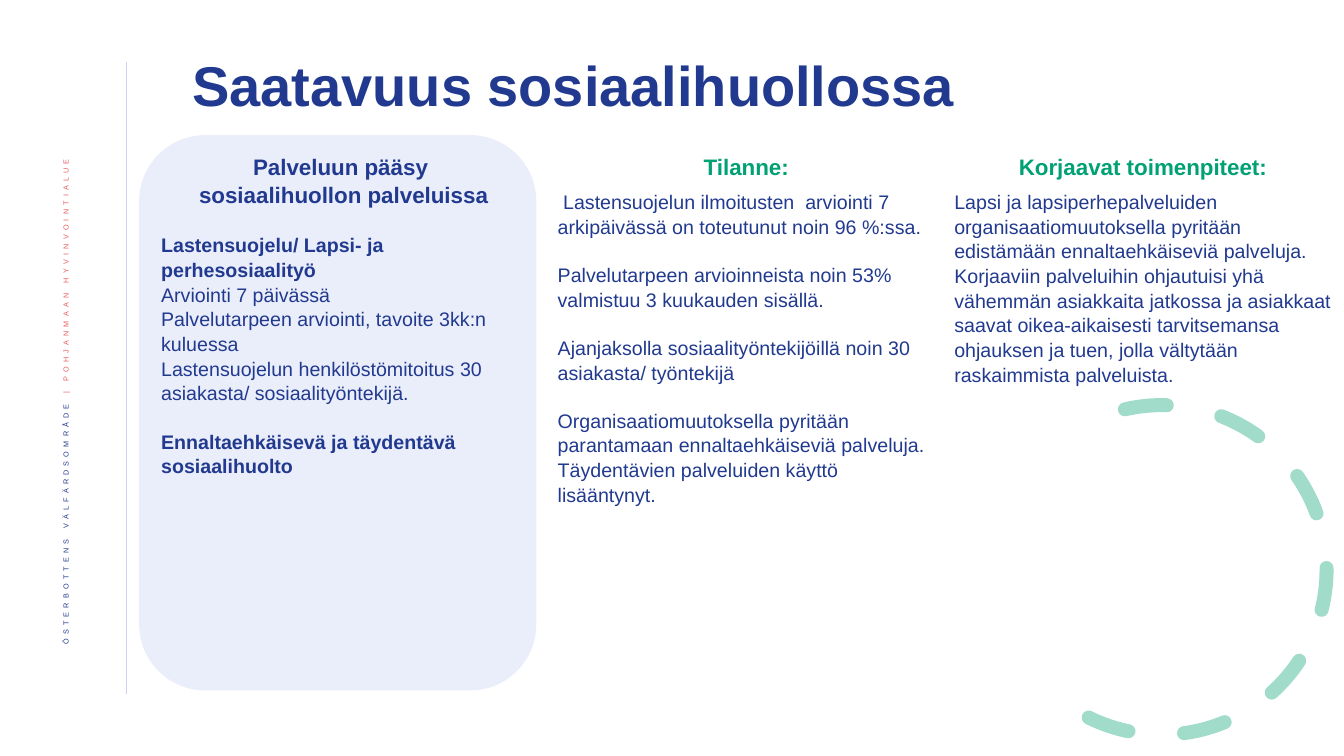
import pptx
import pptx.dml.color
import pptx.enum.dml
import pptx.enum.shapes
import pptx.enum.text
import pptx.oxml
import pptx.oxml.ns
import pptx.util

Pt = pptx.util.Pt
ALIGN = pptx.enum.text.PP_ALIGN
ANCHOR = pptx.enum.text.MSO_ANCHOR
SHAPE = pptx.enum.shapes.MSO_SHAPE

FONT = "Arial"
NAVY, GREEN, CORAL, LAVENDER = "213A8F", "00A174", "EB5C5F", "C9D2F2"

TITLE = "Saatavuus sosiaalihuollossa"
SIDE_LABEL = [
    ("ÖSTERBOTTENS VÄLFÄRDSOMRÅDE ", NAVY),
    ("| POHJANMAAN HYVINVOINTIALUE ", CORAL),
]
COLUMNS = [
    {
        "headings": ["Palveluun pääsy ", "sosiaalihuollon palveluissa"],
        "color": NAVY,
        "width": 275,
        "after_heading": 0,
        "blocks": [
            [("Lastensuojelu/ Lapsi- ja perhesosiaalityö", True),
             ("Arviointi 7 päivässä", False),
             ("Palvelutarpeen arviointi, tavoite 3kk:n kuluessa", False),
             ("Lastensuojelun henkilöstömitoitus 30 asiakasta/ sosiaalityöntekijä.", False)],
            [("Ennaltaehkäisevä ja täydentävä sosiaalihuolto", True)],
        ],
        "first_gap": True,
    },
    {
        "headings": ["Tilanne:"],
        "color": GREEN,
        "width": 283.7,
        "after_heading": 6,
        "blocks": [
            [(" Lastensuojelun ilmoitusten  arviointi 7 arkipäivässä on toteutunut noin 96 %:ssa.", False)],
            [("Palvelutarpeen arvioinneista noin 53% valmistuu 3 kuukauden sisällä.", False)],
            [("Ajanjaksolla sosiaalityöntekijöillä noin 30 asiakasta/ työntekijä", False)],
            [("Organisaatiomuutoksella pyritään parantamaan ennaltaehkäiseviä palveluja. "
              "Täydentävien palveluiden käyttö lisääntynyt.", False)],
        ],
        "first_gap": False,
    },
    {
        "headings": ["Korjaavat toimenpiteet:"],
        "color": GREEN,
        "width": 283.7,
        "after_heading": 6,
        "blocks": [
            [("Lapsi ja lapsiperhepalveluiden organisaatiomuutoksella pyritään edistämään "
              "ennaltaehkäiseviä palveluja. Korjaaviin palveluihin ohjautuisi yhä vähemmän "
              "asiakkaita jatkossa ja asiakkaat saavat oikea-aikaisesti tarvitsemansa "
              "ohjauksen ja tuen, jolla vältytään raskaimmista palveluista.", False)],
        ],
        "first_gap": False,
    },
]
COLUMN_LEFT, COLUMN_TOP, COLUMN_STEP, COLUMN_HEIGHT = 108, 105.1, 283.3, 270
BODY_SPACING, BLOCK_GAP = 1.05, 16.85


def rgb(value):
    return pptx.dml.color.RGBColor.from_string(value)


def set_alpha(color_format_owner, percent):
    color = color_format_owner.find(".//" + pptx.oxml.ns.qn("a:srgbClr"))
    alpha = pptx.oxml.parse_xml(
        f'<a:alpha {pptx.oxml.ns.nsdecls("a")} val="{percent * 1000}"/>')
    color.append(alpha)


def add_text_frame(slide, left, top, width, height, anchor=ANCHOR.TOP):
    box = slide.shapes.add_textbox(Pt(left), Pt(top), Pt(width), Pt(height))
    frame = box.text_frame
    frame.word_wrap = True
    frame.vertical_anchor = anchor
    return frame


def add_paragraph(frame, spacing, alignment=ALIGN.LEFT, before=0, after=0):
    first = frame.paragraphs[0]
    paragraph = frame.add_paragraph() if first.runs else first
    paragraph.alignment = alignment
    paragraph.line_spacing = spacing
    paragraph.space_before = Pt(before)
    paragraph.space_after = Pt(after)
    return paragraph


def add_run(paragraph, text, size, color, bold=False):
    run = paragraph.add_run()
    run.text = text
    run.font.name = FONT
    run.font.size = Pt(size)
    run.font.bold = bold
    run.font.color.rgb = rgb(color)
    return run


def add_divider(slide):
    divider = slide.shapes.add_connector(
        pptx.enum.shapes.MSO_CONNECTOR.STRAIGHT, Pt(90), Pt(44), Pt(90), Pt(495.4))
    divider.line.color.rgb = rgb(LAVENDER)
    divider.line.width = Pt(0.5)
    divider._element.spPr.append(
        pptx.oxml.parse_xml(f'<a:effectLst {pptx.oxml.ns.nsdecls("a")}/>'))


def add_side_label(slide):
    frame = add_text_frame(slide, 30.2, 102.2, 37.4, 412.6, ANCHOR.MIDDLE)
    frame._txBody.bodyPr.set("vert", "vert270")
    paragraph = add_paragraph(frame, 0.9, ALIGN.RIGHT)
    for text, color in SIDE_LABEL:
        properties = add_run(paragraph, text, 9, color).font._element
        properties.set("baseline", "30000")
        properties.set("spc", "300")


def add_dashed_arc(slide):
    arc = slide.shapes.add_shape(SHAPE.ARC, Pt(712.1), Pt(289.4), Pt(235.4), Pt(235.4))
    arc.shadow.inherit = False
    arc.rotation = 98.9
    for index, degrees in enumerate((158.17, 17.81)):
        arc.adjustments[index] = degrees * 0.6
    arc.fill.background()
    arc.line.color.rgb = rgb(GREEN)
    arc.line.width = Pt(10)
    arc.line.dash_style = pptx.enum.dml.MSO_LINE.DASH
    outline = arc._element.spPr.find(pptx.oxml.ns.qn("a:ln"))
    outline.set("cap", "rnd")
    set_alpha(outline, 36)


def add_panel(slide):
    panel = slide.shapes.add_shape(
        SHAPE.ROUNDED_RECTANGLE, Pt(99.4), Pt(96.5), Pt(283.7), Pt(396.7))
    panel.shadow.inherit = False
    panel.fill.solid()
    panel.fill.fore_color.rgb = rgb(LAVENDER)
    panel.line.fill.background()
    set_alpha(panel._element.spPr, 38)


def add_column(slide, index, column):
    frame = add_text_frame(slide, COLUMN_LEFT + index * COLUMN_STEP, COLUMN_TOP,
                           column["width"], COLUMN_HEIGHT)
    for heading in column["headings"]:
        paragraph = add_paragraph(frame, BODY_SPACING, ALIGN.CENTER,
                                  after=column["after_heading"])
        add_run(paragraph, heading, 16, column["color"], True)
    for block_index, block in enumerate(column["blocks"]):
        for line_index, (text, bold) in enumerate(block):
            has_gap = line_index == 0 and (block_index > 0 or column["first_gap"])
            paragraph = add_paragraph(frame, BODY_SPACING,
                                      before=BLOCK_GAP if has_gap else 0)
            add_run(paragraph, text, 14, NAVY, bold)


def main():
    presentation = pptx.Presentation()
    presentation.slide_width = Pt(960)
    presentation.slide_height = Pt(540)
    slide = presentation.slides.add_slide(presentation.slide_layouts[6])
    add_divider(slide)
    add_side_label(slide)
    add_dashed_arc(slide)
    title = add_text_frame(slide, 130.3, 32.4, 734.4, 61.2, ANCHOR.MIDDLE)
    add_run(add_paragraph(title, 0.9), TITLE, 40, NAVY, True)
    add_panel(slide)
    for index, column in enumerate(COLUMNS):
        add_column(slide, index, column)
    presentation.save("out.pptx")


if __name__ == "__main__":
    main()
